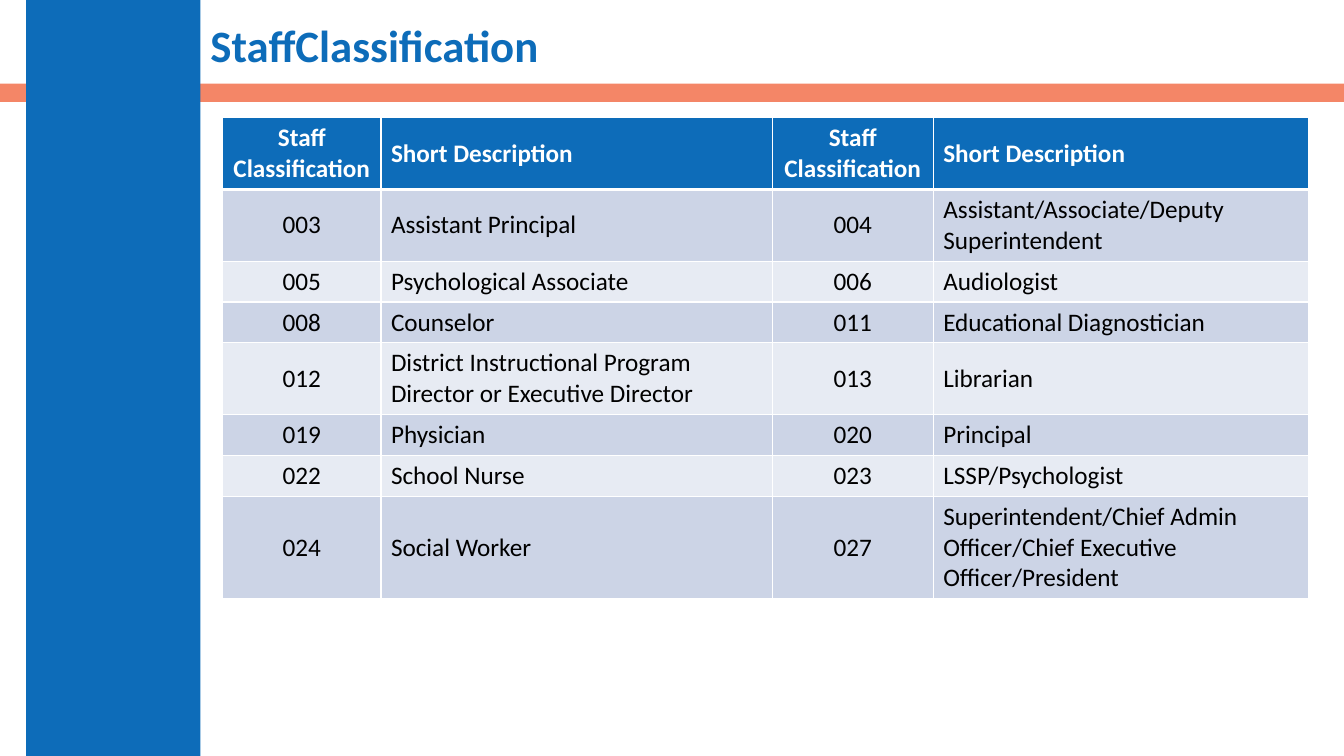
from dataclasses import dataclass

from lxml import etree
from pptx import Presentation
from pptx.dml.color import RGBColor
from pptx.enum import shapes, text
from pptx.oxml import ns
from pptx.slide import Slide
from pptx.table import _Cell
from pptx.text.text import _Paragraph
from pptx.util import Cm, Pt


@dataclass(frozen=True)
class Theme:
    font: str = "Calibri"
    title_size: int = 32
    table_size: int = 18
    blue: str = "0D6CB9"
    coral: str = "F16038"
    white: str = "FFFFFF"
    black: str = "000000"
    row_tints: tuple[str, str] = ("CCD4E6", "E7EBF3")


@dataclass(frozen=True)
class Band:
    left: float
    top: float
    width: float
    height: float
    color: str
    opacity: int = 100


@dataclass(frozen=True)
class Staff:
    code: str
    description: str


THEME = Theme()
SLIDE_WIDTH, SLIDE_HEIGHT = 33.87, 19.05
BANDS = [
    Band(0, 2.11, SLIDE_WIDTH, 0.46, THEME.coral, 76),
    Band(0.66, 0, 4.39, SLIDE_HEIGHT, THEME.blue),
]
HEADING = Staff("Staff Classification", "Short Description")
STAFF = [
    Staff("003", "Assistant Principal"),
    Staff("004", "Assistant/Associate/Deputy Superintendent"),
    Staff("005", "Psychological Associate"),
    Staff("006", "Audiologist"),
    Staff("008", "Counselor"),
    Staff("011", "Educational Diagnostician"),
    Staff("012", "District Instructional Program Director or Executive Director"),
    Staff("013", "Librarian"),
    Staff("019", "Physician"),
    Staff("020", "Principal"),
    Staff("022", "School Nurse"),
    Staff("023", "LSSP/Psychologist"),
    Staff("024", "Social Worker"),
    Staff("027", "Superintendent/Chief Admin Officer/Chief Executive Officer/President"),
]
COLUMN_WIDTHS = [3.99, 9.86, 4.06, 9.47]
ROW_HEIGHT = 1.03


def style_paragraph(paragraph: _Paragraph, size: int, color: str, bold: bool) -> None:
    font = paragraph.font
    font.name, font.size, font.bold = THEME.font, Pt(size), bold
    font.color.rgb = RGBColor.from_string(color)


def add_band(slide: Slide, band: Band) -> None:
    """Draw a plain strip just behind the title."""
    strip = slide.shapes.add_shape(
        shapes.MSO_SHAPE.RECTANGLE,
        Cm(band.left), Cm(band.top), Cm(band.width), Cm(band.height),
    )
    strip.shadow.inherit = False
    strip.line.fill.background()
    strip.fill.solid()
    strip.fill.fore_color.rgb = RGBColor.from_string(band.color)
    if band.opacity < 100:
        color = strip.element.spPr.find(".//" + ns.qn("a:srgbClr"))
        etree.SubElement(color, ns.qn("a:alpha"), val=str(band.opacity * 1000))
    slide.shapes.title.element.addprevious(strip.element)


def write_title(slide: Slide, wording: str) -> None:
    title = slide.shapes.title
    title.left, title.top, title.width, title.height = Cm(5.05), Cm(0.18), Cm(28.65), Cm(2.08)
    title.text = wording
    title.text_frame.vertical_anchor = text.MSO_ANCHOR.MIDDLE
    paragraph = title.text_frame.paragraphs[0]
    paragraph.alignment = text.PP_ALIGN.LEFT
    paragraph.line_spacing = 0.9
    style_paragraph(paragraph, THEME.title_size, THEME.blue, True)


def add_borders(cell: _Cell, top: int, bottom: int) -> None:
    """Give the cell white borders, with top and bottom widths in points."""
    properties = cell._tc.get_or_add_tcPr()
    for side, width in {"L": 1, "R": 1, "T": top, "B": bottom}.items():
        line = etree.SubElement(properties, ns.qn(f"a:ln{side}"), w=str(Pt(width)))
        fill = etree.SubElement(line, ns.qn("a:solidFill"))
        etree.SubElement(fill, ns.qn("a:srgbClr"), val=THEME.white)


def fill_cell(cell: _Cell, wording: str, row: int, column: int) -> None:
    is_header = row == 0
    add_borders(cell, top=3 if row == 1 else 1, bottom=3 if is_header else 1)
    cell.fill.solid()
    cell.fill.fore_color.rgb = RGBColor.from_string(
        THEME.blue if is_header else THEME.row_tints[(row - 1) % 2]
    )
    cell.text = wording
    cell.vertical_anchor = text.MSO_ANCHOR.MIDDLE
    paragraph = cell.text_frame.paragraphs[0]
    paragraph.alignment = text.PP_ALIGN.LEFT if column % 2 else text.PP_ALIGN.CENTER
    style_paragraph(
        paragraph, THEME.table_size, THEME.white if is_header else THEME.black, is_header
    )


def add_staff_table(slide: Slide) -> None:
    """List the staff classes two to a row, below the heading."""
    entries = [HEADING, HEADING, *STAFF]
    row_count = len(entries) // 2
    table = slide.shapes.add_table(
        row_count, len(COLUMN_WIDTHS), Cm(5.61), Cm(2.97),
        Cm(sum(COLUMN_WIDTHS)), Cm(ROW_HEIGHT * row_count),
    ).table
    for column, width in zip(table.columns, COLUMN_WIDTHS):
        column.width = Cm(width)
    for row in table.rows:
        row.height = Cm(ROW_HEIGHT)
    for index, staff in enumerate(entries):
        row, pair = divmod(index, 2)
        for offset, wording in enumerate((staff.code, staff.description)):
            column = pair * 2 + offset
            fill_cell(table.cell(row, column), wording, row, column)


def main() -> None:
    deck = Presentation()
    deck.slide_width, deck.slide_height = Cm(SLIDE_WIDTH), Cm(SLIDE_HEIGHT)
    slide = deck.slides.add_slide(deck.slide_layouts.get_by_name("Title Only"))
    for band in BANDS:
        add_band(slide, band)
    write_title(slide, "StaffClassification")
    add_staff_table(slide)
    deck.save("out.pptx")


if __name__ == "__main__":
    main()
